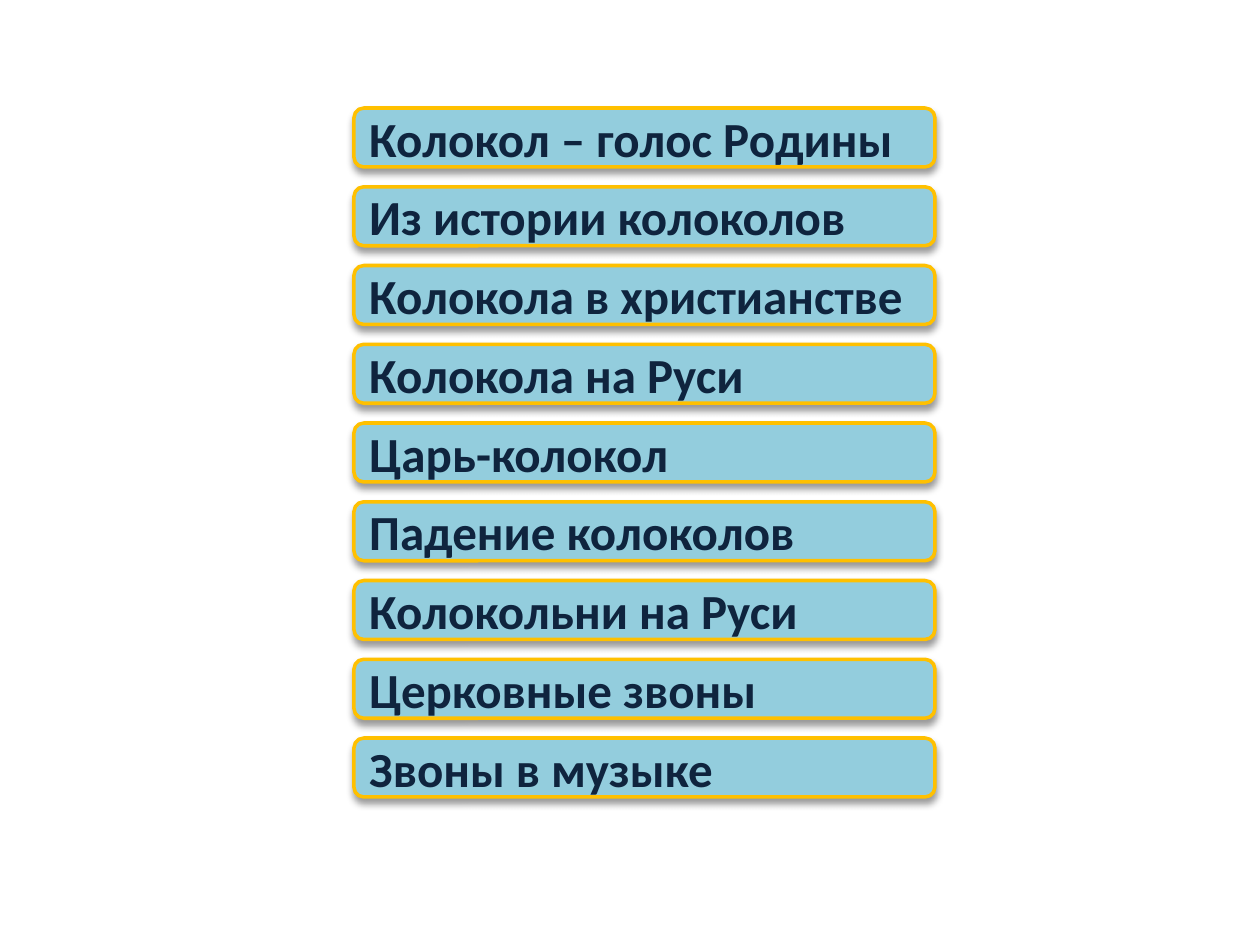
from lxml.etree import SubElement
from pptx import Presentation
from pptx.dml.color import RGBColor
from pptx.enum.shapes import MSO_SHAPE
from pptx.enum.text import MSO_ANCHOR, PP_ALIGN
from pptx.oxml.ns import qn
from pptx.util import Emu, Pt

TOPICS = [
    "Колокол – голос Родины",
    "Из истории колоколов",
    "Колокола в христианстве",
    "Колокола на Руси",
    "Царь-колокол",
    "Падение колоколов",
    "Колокольни на Руси",
    "Церковные звоны",
    "Звоны в музыке",
]

SKY = RGBColor(0x93, 0xCD, 0xDD)
GOLD = RGBColor(0xFF, 0xC0, 0x00)
NAVY = RGBColor(0x0F, 0x24, 0x3E)
BLACK = RGBColor(0x00, 0x00, 0x00)

# Layout in px
PX_PER_INCH = 126
SLIDE_WIDTH, SLIDE_HEIGHT = 1260, 945
LEFT, WIDTH, HEIGHT = 354, 581, 59
FIRST_TOP, LAST_TOP = 108, 738


def px(length):
    return Emu(round(length * 914400 / PX_PER_INCH))


def add_shadow(shape, color=BLACK, opacity=40, blur=4, distance=3, angle=90):
    shape.shadow.inherit = False
    effects = shape._element.spPr.find(qn("a:effectLst"))
    shadow = SubElement(effects, qn("a:outerShdw"), blurRad=str(Pt(blur)),
                        dist=str(Pt(distance)), dir=str(angle * 60000),
                        rotWithShape="0")
    tint = SubElement(shadow, qn("a:srgbClr"), val=str(color))
    SubElement(tint, qn("a:alpha"), val=str(opacity * 1000))


def write_text(shape, text, size=28, font="Calibri", color=NAVY, bold=True):
    frame = shape.text_frame
    frame.word_wrap = True
    frame.vertical_anchor = MSO_ANCHOR.MIDDLE
    para = frame.paragraphs[0]
    para.alignment = PP_ALIGN.LEFT
    span = para.add_run()
    span.text = text
    span.font.name = font
    span.font.size = Pt(size)
    span.font.bold = bold
    span.font.color.rgb = color


def add_topic(page, text, top):
    box = page.shapes.add_shape(MSO_SHAPE.ROUNDED_RECTANGLE,
                                px(LEFT), px(top), px(WIDTH), px(HEIGHT))
    box.fill.solid()
    box.fill.fore_color.rgb = SKY
    box.line.color.rgb = GOLD
    box.line.width = Pt(2)
    add_shadow(box)
    write_text(box, text)


def main():
    deck = Presentation()
    deck.slide_width, deck.slide_height = px(SLIDE_WIDTH), px(SLIDE_HEIGHT)
    page = deck.slides.add_slide(deck.slide_layouts[6])

    # Evenly spaced column of topics
    step = (LAST_TOP - FIRST_TOP) / (len(TOPICS) - 1)
    for row, topic in enumerate(TOPICS):
        add_topic(page, topic, FIRST_TOP + row * step)

    deck.save("out.pptx")


if __name__ == "__main__":
    main()
